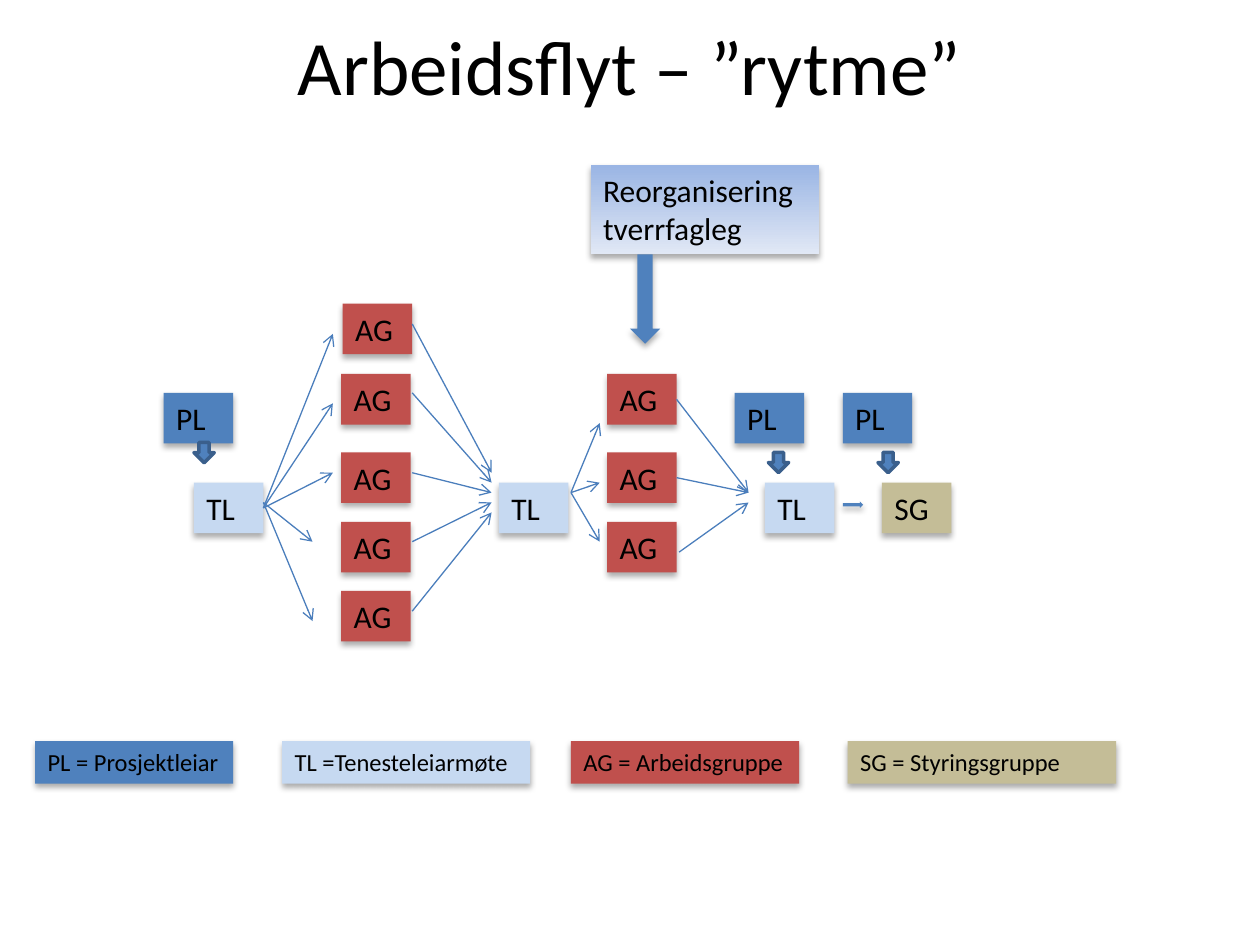
from lxml import etree
from pptx import Presentation
from pptx.dml.color import RGBColor
from pptx.enum.shapes import MSO_CONNECTOR, MSO_SHAPE as Preset
from pptx.enum.text import MSO_ANCHOR as Anchor, MSO_AUTO_SIZE as AutoSize, PP_ALIGN as Align
from pptx.oxml.ns import qn
from pptx.util import Cm, Pt

BLACK = RGBColor(0x00, 0x00, 0x00)
BLUE = RGBColor(0x4F, 0x81, 0xBD)
DARK_BLUE = RGBColor(0x3A, 0x5F, 0x8C)
LINE_BLUE = RGBColor(0x4B, 0x7E, 0xBC)
PALE_BLUE = RGBColor(0xC6, 0xD9, 0xF1)
RED = RGBColor(0xC0, 0x50, 0x4D)
TAN = RGBColor(0xC4, 0xBD, 0x97)
GRADIENT_TOP = RGBColor(0x9A, 0xB5, 0xE4)
GRADIENT_BOTTOM = RGBColor(0xE1, 0xE8, 0xF5)

ROLE_COLORS = {"PL": BLUE, "TL": PALE_BLUE, "AG": RED, "SG": TAN}
BOX_WIDTH, BOX_HEIGHT = 1.4, 1.02
PL_TOP, TL_TOP = 7.92, 9.73


def write_text(shape, text, size=18, align=Align.LEFT, anchor=Anchor.TOP, fit=AutoSize.NONE):
    frame = shape.text_frame
    frame.word_wrap = True
    frame.auto_size = fit
    frame.vertical_anchor = anchor
    paragraph = frame.paragraphs[0]
    paragraph.alignment = align
    run = paragraph.add_run()
    run.text = text
    run.font.name = "Calibri"
    run.font.size = Pt(size)
    run.font.color.rgb = BLACK


def add_shadow(shape):
    """Give the shape a soft shadow falling straight down."""
    effects = shape._element.spPr.find(qn("a:effectLst"))
    shadow = etree.SubElement(
        effects, qn("a:outerShdw"), blurRad=str(Pt(3.5)), dist=str(Pt(2.2)),
        dir="5400000", rotWithShape="0")
    color = etree.SubElement(shadow, qn("a:srgbClr"), val="000000")
    etree.SubElement(color, qn("a:alpha"), val="32000")


class FlowSlide:
    def __init__(self, presentation):
        self.slide = presentation.slides.add_slide(presentation.slide_layouts[6])
        self.shapes = self.slide.shapes

    def title(self, text):
        box = self.shapes.add_textbox(Cm(1.27), Cm(-0.08), Cm(22.86), Cm(2.79))
        write_text(box, text, size=44, align=Align.CENTER, anchor=Anchor.MIDDLE)

    def block(self, preset, left, top, width, height, fill=BLUE, outline=None):
        """Add a preset shape: outlined and flat, or without outline and shadowed."""
        shape = self.shapes.add_shape(preset, Cm(left), Cm(top), Cm(width), Cm(height))
        shape.shadow.inherit = False
        shape.fill.solid()
        shape.fill.fore_color.rgb = fill
        if outline is None:
            shape.line.fill.background()
            add_shadow(shape)
        else:
            shape.line.color.rgb = outline
            shape.line.width = Pt(2)
        return shape

    def box(self, text, left, top, width=BOX_WIDTH, height=BOX_HEIGHT, size=18):
        """Add a labelled box coloured by the role its text starts with."""
        fill = ROLE_COLORS.get(text[:2], PALE_BLUE)
        shape = self.block(Preset.RECTANGLE, left, top, width, height, fill)
        write_text(shape, text, size=size, fit=AutoSize.SHAPE_TO_FIT_TEXT)
        return shape

    def gradient_box(self, text, left, top, width, height):
        fill = self.box(text, left, top, width, height).fill
        fill.gradient()
        fill.gradient_angle = 270
        for stop, color in zip(fill.gradient_stops, (GRADIENT_TOP, GRADIENT_BOTTOM)):
            stop.color.rgb = color

    def small_arrow(self, left, top):
        self.block(Preset.DOWN_ARROW, left, top, 0.41, 0.41, outline=DARK_BLUE)

    def arrow(self, start, end, source=None):
        """Draw an arrow, joined to the right side of source when one is given."""
        points = [Cm(value) for value in (*start, *end)]
        line = self.shapes.add_connector(MSO_CONNECTOR.STRAIGHT, *points)
        if source is not None:
            line.begin_connect(source, 3)
        line.line.color.rgb = LINE_BLUE
        line.line.width = Pt(0.75)
        etree.SubElement(line.line._get_or_add_ln(), qn("a:tailEnd"), type="arrow")
        etree.SubElement(line._element.spPr, qn("a:effectLst"))


def main():
    presentation = Presentation()
    presentation.slide_width, presentation.slide_height = Cm(25.4), Cm(19.05)
    flow = FlowSlide(presentation)
    flow.title("Arbeidsflyt – ”rytme”")

    # Boxes, from left to right
    first_tl, _, _ = [flow.box("TL", left, TL_TOP) for left in (3.91, 10.06, 15.42)]
    flow.box("SG", 17.78, TL_TOP)
    for left in (3.3, 14.81, 16.99):
        flow.box("PL", left, PL_TOP)
    flow.box("AG", 6.91, 6.12)
    for top in (7.54, 9.12, 10.52, 11.91):
        flow.box("AG", 6.88, top)
    cross_groups = [flow.box("AG", 12.24, top) for top in (7.54, 9.12, 10.52)]

    # Block arrows
    flow.gradient_box("Reorganisering tverrfagleg", 11.91, 3.33, 4.6, 1.8)
    flow.block(Preset.DOWN_ARROW, 12.7, 5.13, 0.61, 1.8)
    flow.block(Preset.RIGHT_ARROW, 16.99, 10.11, 0.41, 0.13)
    for left, top in ((3.91, 8.92), (15.49, 9.12), (17.7, 9.12)):
        flow.small_arrow(left, top)

    # First TL out to the five groups
    for end_y in (6.73, 8.13, 9.53):
        flow.arrow((5.31, 10.24), (6.71, end_y), source=first_tl)
    for end_y in (10.92, 12.52):
        flow.arrow((5.31, 10.13), (6.3, end_y))
    # The five groups in to the second TL
    for index, start_y in enumerate((6.53, 7.92, 9.53, 10.92, 12.32)):
        flow.arrow((8.31, start_y), (9.91, 9.53 + 0.2 * index))
    # Second TL out to the cross-disciplinary groups, and these in to the third TL
    for end_y in (8.53, 9.73, 10.92):
        flow.arrow((11.51, 9.93), (12.09, end_y))
    for group in cross_groups[:2]:
        flow.arrow((13.64, 9.93), (15.09, 9.93), source=group)
    flow.arrow((13.69, 11.13), (15.09, 10.13))

    legend = (
        ("PL = Prosjektleiar", 0.71, 3.99),
        ("TL =Tenesteleiarmøte", 5.69, 5),
        ("AG = Arbeidsgruppe", 11.51, 4.6),
        ("SG = Styringsgruppe", 17.09, 5.41),
    )
    for text, left, width in legend:
        flow.box(text, left, 14.94, width, 0.86, size=14)

    presentation.save("out.pptx")


if __name__ == "__main__":
    main()
